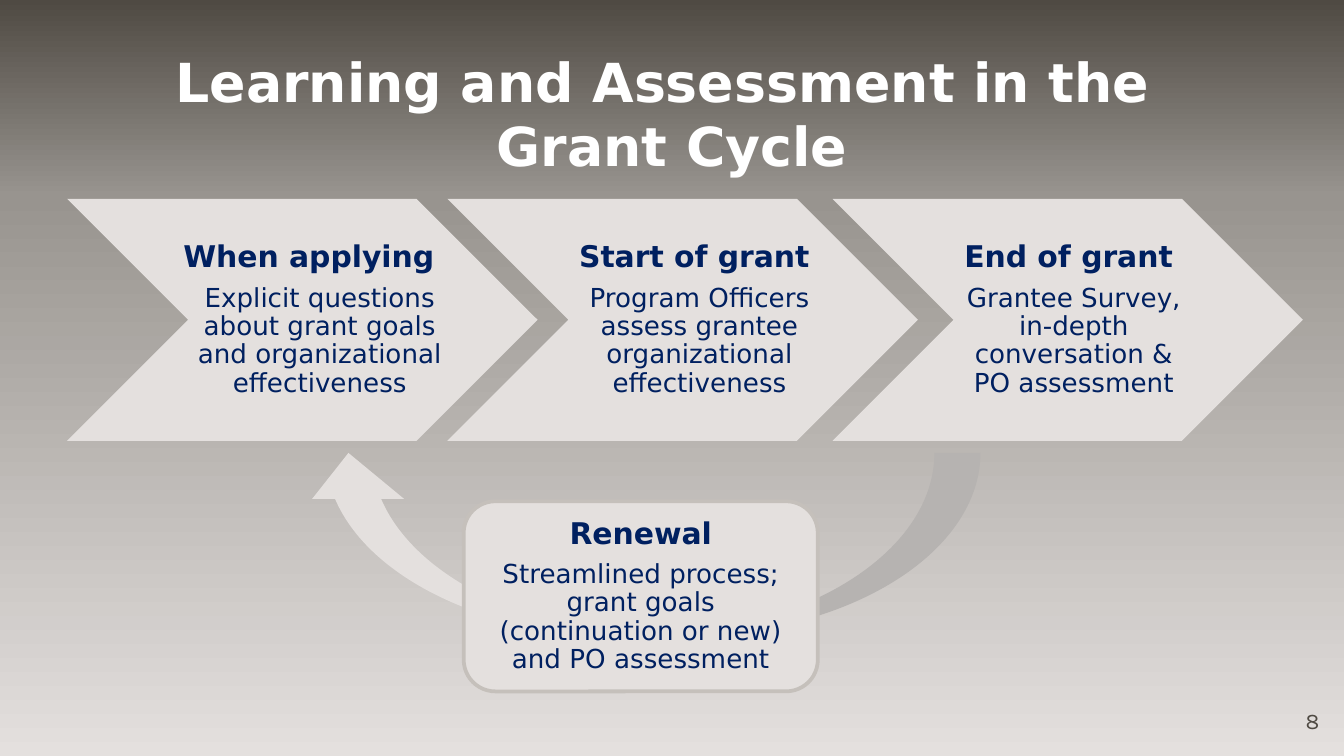
from copy import deepcopy
from dataclasses import dataclass

from pptx import Presentation
from pptx.dml.color import RGBColor
from pptx.enum.shapes import MSO_SHAPE
from pptx.enum.text import MSO_ANCHOR, PP_ALIGN
from pptx.shapes.autoshape import Shape
from pptx.shapes.shapetree import GroupShapes, SlideShapes
from pptx.slide import Slide
from pptx.text.text import TextFrame
from pptx.util import Emu, Pt

PX = 4572  # 200 px to the inch
SLIDE_WIDTH, SLIDE_HEIGHT = 2000, 1125
FONT = "DejaVu Sans"
NUMBER_FONT = "Karla"
WHITE = RGBColor(0xFF, 0xFF, 0xFF)
NAVY = RGBColor(0x00, 0x20, 0x60)
DARK = RGBColor(0x4F, 0x4A, 0x43)
MID = RGBColor(0x98, 0x94, 0x8F)
LIGHT = RGBColor(0xE4, 0xE0, 0xDE)
BORDER = RGBColor(0xC5, 0xC0, 0xBB)
BACKGROUND_STOPS = ((0, DARK), (0.26, MID), (1, LIGHT))

STAGE_TOP, STAGE_WIDTH, STAGE_HEIGHT = 296, 700, 360
DEFAULT_INSETS = (20, 10, 20, 10)


@dataclass(frozen=True)
class Box:
    left: int
    top: int
    width: int
    height: int

    def emu(self) -> tuple[Emu, ...]:
        return tuple(Emu(n * PX) for n in (self.left, self.top, self.width, self.height))


@dataclass(frozen=True)
class Stage:
    left: int
    text_left: int
    text_width: int
    heading: str
    detail: str
    heading_align: PP_ALIGN = PP_ALIGN.CENTER


STAGES = (
    Stage(100, 263, 420, "When applying",
          "Explicit questions about grant goals and organizational effectiveness",
          PP_ALIGN.LEFT),
    Stage(666, 828, 420, "Start of grant ",
          "Program Officers assess grantee organizational effectiveness"),
    Stage(1239, 1411, 368, "End of grant ",
          "Grantee Survey, in-depth conversation & PO assessment"),
)


def paint_background(slide: Slide) -> None:
    fill = slide.background.fill
    fill.gradient()
    fill.gradient_angle = 270
    stop_list = slide.element.xpath(".//p:bg//a:gsLst")[0]
    stop_list.append(deepcopy(stop_list[-1]))
    for stop, (position, color) in zip(fill.gradient_stops, BACKGROUND_STOPS):
        stop.position = position
        stop.color.rgb = color


def add_text_frame(shapes: SlideShapes | GroupShapes, box: Box, anchor: MSO_ANCHOR,
                   insets: tuple[int, int, int, int] = DEFAULT_INSETS) -> TextFrame:
    """Add a wrapping text box; insets run left, top, right, bottom."""
    frame = shapes.add_textbox(*box.emu()).text_frame
    frame.word_wrap = True
    frame.vertical_anchor = anchor
    (frame.margin_left, frame.margin_top,
     frame.margin_right, frame.margin_bottom) = (Emu(n * PX) for n in insets)
    return frame


def write_line(frame: TextFrame, text: str, size: float, color: RGBColor,
               align: PP_ALIGN, bold: bool = False, font: str = FONT) -> None:
    paragraph = frame.paragraphs[0]
    if paragraph.runs:
        paragraph = frame.add_paragraph()
    paragraph.text = text
    paragraph.alignment = align
    paragraph.font.name = font
    paragraph.font.size = Pt(size)
    paragraph.font.bold = bold
    paragraph.font.color.rgb = color


def write_step(frame: TextFrame, heading: str, detail: str,
               heading_align: PP_ALIGN = PP_ALIGN.CENTER) -> None:
    write_line(frame, heading, 16, NAVY, heading_align, bold=True)
    write_line(frame, detail, 14, NAVY, PP_ALIGN.CENTER)
    for paragraph in frame.paragraphs:
        paragraph.line_spacing = 0.9
    frame.paragraphs[0].space_after = Pt(5.6)


def add_light_shape(shapes: GroupShapes, preset: MSO_SHAPE, box: Box) -> Shape:
    shape = shapes.add_shape(preset, *box.emu())
    shape.shadow.inherit = False
    shape.fill.solid()
    shape.fill.fore_color.rgb = LIGHT
    shape.line.fill.background()
    return shape


def add_stage(slide: Slide, stage: Stage) -> None:
    shapes = slide.shapes.add_group_shape().shapes
    add_light_shape(shapes, MSO_SHAPE.CHEVRON,
                    Box(stage.left, STAGE_TOP, STAGE_WIDTH, STAGE_HEIGHT))
    text_box = Box(stage.text_left, STAGE_TOP, stage.text_width, STAGE_HEIGHT)
    frame = add_text_frame(shapes, text_box, MSO_ANCHOR.MIDDLE, (10, 4, 4, 4))
    write_step(frame, stage.heading, stage.detail, stage.heading_align)


def add_renewal(slide: Slide) -> None:
    shapes = slide.shapes.add_group_shape().shapes
    return_arrow = add_light_shape(shapes, MSO_SHAPE.CURVED_DOWN_ARROW,
                                   Box(450, 674, 1009, 274))
    return_arrow.rotation = 180
    renewal = add_light_shape(shapes, MSO_SHAPE.ROUNDED_RECTANGLE,
                              Box(690, 746, 527, 283))
    renewal.line.color.rgb = BORDER
    renewal.line.width = Pt(2)
    frame = renewal.text_frame
    frame.word_wrap = True
    frame.vertical_anchor = MSO_ANCHOR.MIDDLE
    write_step(frame, "Renewal",
               "Streamlined process; grant goals (continuation or new) and PO assessment")


def main() -> None:
    presentation = Presentation()
    presentation.slide_width = Emu(SLIDE_WIDTH * PX)
    presentation.slide_height = Emu(SLIDE_HEIGHT * PX)
    slide = presentation.slides.add_slide(presentation.slide_layouts[6])
    paint_background(slide)

    title = add_text_frame(slide.shapes, Box(58, 62, 1884, 162), MSO_ANCHOR.TOP)
    write_line(title, "Learning and Assessment in the \vGrant Cycle", 28.8, WHITE,
               PP_ALIGN.CENTER, bold=True)
    page_number = add_text_frame(slide.shapes, Box(1617, 1043, 366, 60),
                                 MSO_ANCHOR.MIDDLE)
    write_line(page_number, "8", 12, DARK, PP_ALIGN.RIGHT, font=NUMBER_FONT)

    for stage in STAGES:
        add_stage(slide, stage)
    add_renewal(slide)
    presentation.save("out.pptx")


if __name__ == "__main__":
    main()
